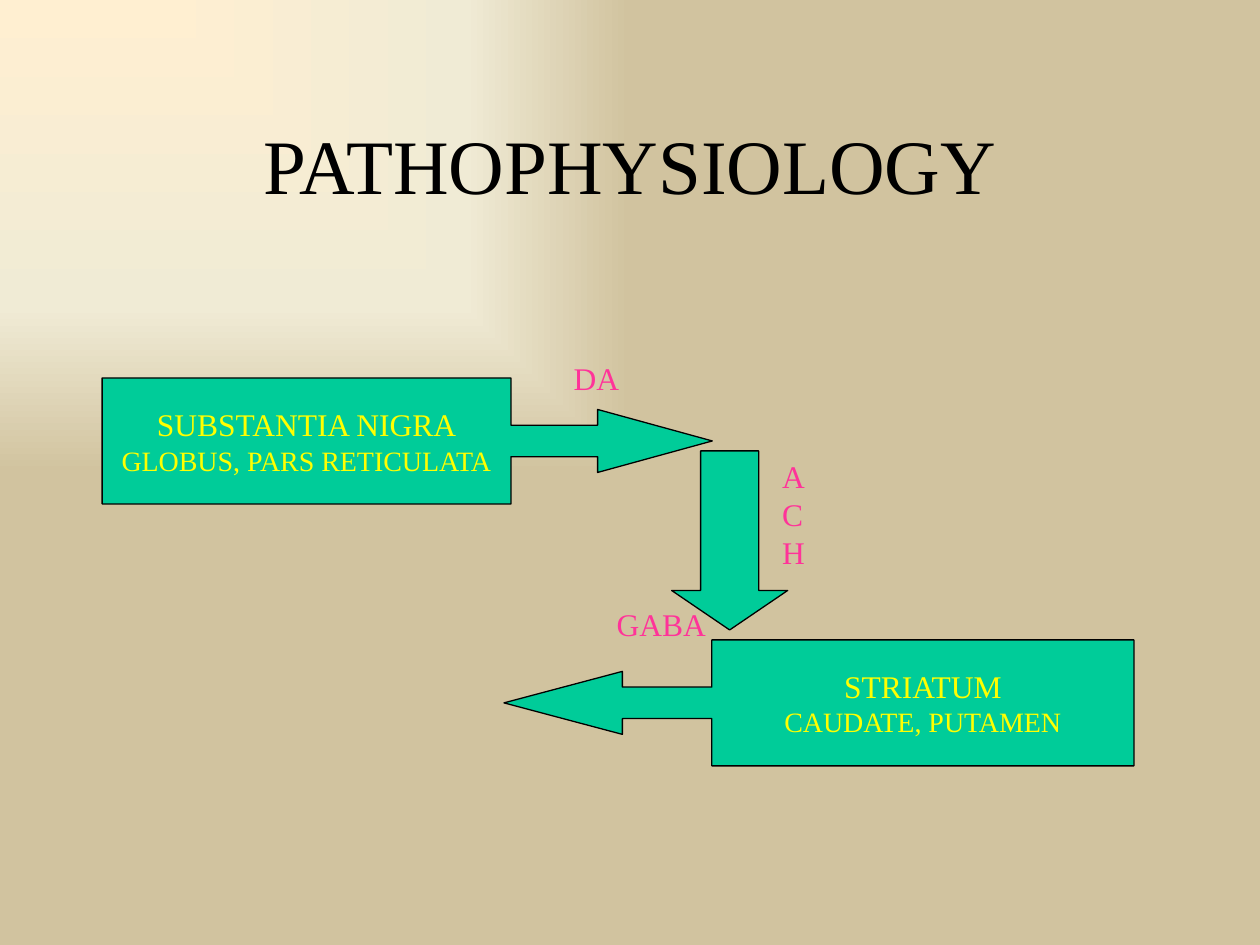
import pptx
import pptx.dml.color
import pptx.enum.shapes
import pptx.enum.text
import pptx.oxml
import pptx.oxml.ns
import pptx.util

Cm = pptx.util.Cm
Pt = pptx.util.Pt
RGBColor = pptx.dml.color.RGBColor
SHAPE = pptx.enum.shapes.MSO_SHAPE
ALIGN = pptx.enum.text.PP_ALIGN
ANCHOR = pptx.enum.text.MSO_ANCHOR
AUTO_SIZE = pptx.enum.text.MSO_AUTO_SIZE

FONT = "Times New Roman"
BLACK = RGBColor(0x00, 0x00, 0x00)
GREEN = RGBColor(0x00, 0xCC, 0x99)
YELLOW = RGBColor(0xFF, 0xFF, 0x00)
PINK = RGBColor(0xFF, 0x33, 0x99)
GLOW = (
    (0, RGBColor(0xFF, 0xEF, 0xD1)),
    (65, RGBColor(0xF0, 0xEB, 0xD5)),
    (100, RGBColor(0xD1, 0xC3, 0x9F)),
)


def paint_background(slide):
    """Spread the gradient from the top left corner in rectangles."""
    slide.background.fill.gradient()
    gradient = slide.element.find(".//" + pptx.oxml.ns.qn("a:gradFill"))
    stops = "".join(
        f'<a:gs pos="{percent * 1000}"><a:srgbClr val="{color}"/></a:gs>'
        for percent, color in GLOW
    )
    corner_gradient = pptx.oxml.parse_xml(
        f'<a:gradFill {pptx.oxml.ns.nsdecls("a")} rotWithShape="0">'
        f"<a:gsLst>{stops}</a:gsLst>"
        '<a:path path="rect"><a:fillToRect r="100000" b="100000"/></a:path>'
        "</a:gradFill>"
    )
    gradient.getparent().replace(gradient, corner_gradient)


def write_lines(frame, lines, color, align):
    """Write one paragraph for each (text, size) pair."""
    for index, (text, size) in enumerate(lines):
        paragraph = frame.add_paragraph() if index else frame.paragraphs[0]
        paragraph.alignment = align
        run = paragraph.add_run()
        run.text = text
        run.font.name = FONT
        run.font.size = Pt(size)
        run.font.color.rgb = color


def add_title(slide, left, top, width, height):
    title = slide.shapes.title
    title.left, title.top = Cm(left), Cm(top)
    title.width, title.height = Cm(width), Cm(height)
    title.text_frame.vertical_anchor = ANCHOR.MIDDLE
    write_lines(title.text_frame, [("PATHOPHYSIOLOGY", 44)], BLACK, ALIGN.CENTER)


def add_green_shape(slide, kind, box, adjustments, lines=()):
    shape = slide.shapes.add_shape(kind, *map(Cm, box))
    for index, value in enumerate(adjustments):
        shape.adjustments[index] = value
    shape.shadow.inherit = False
    shape.fill.solid()
    shape.fill.fore_color.rgb = GREEN
    shape.line.color.rgb = BLACK
    shape.line.width = Pt(0.75)
    shape.text_frame.word_wrap = False
    shape.text_frame.vertical_anchor = ANCHOR.MIDDLE
    write_lines(shape.text_frame, lines, YELLOW, ALIGN.CENTER)


def add_transmitter(slide, text, box, wrap):
    label = slide.shapes.add_textbox(*map(Cm, box))
    label.text_frame.word_wrap = wrap
    label.text_frame.auto_size = AUTO_SIZE.SHAPE_TO_FIT_TEXT
    write_lines(label.text_frame, [(text, 18)], PINK, ALIGN.RIGHT)


def add_pathway(slide, left, top):
    """Draw the loop between substantia nigra and striatum."""

    def place(x, y, width, height):
        return left + x, top + y, width, height

    add_green_shape(
        slide, SHAPE.LEFT_ARROW_CALLOUT, place(8.1, 5.79, 12.7, 2.54),
        (0.25, 0.25, 0.94, 0.67),
        [("STRIATUM", 18), ("CAUDATE, PUTAMEN", 16)],
    )
    add_green_shape(
        slide, SHAPE.RIGHT_ARROW_CALLOUT, place(0, 0.51, 12.3, 2.54),
        (0.25, 0.25, 0.91, 0.67),
        [("SUBSTANTIA NIGRA", 18), ("GLOBUS, PARS RETICULATA", 16)],
    )
    add_transmitter(slide, "GABA", place(9.04, 4.96, 3.38, 1.02), True)
    add_transmitter(slide, "DA", place(9.22, 0, 1.45, 1.02), False)
    add_green_shape(
        slide, SHAPE.DOWN_ARROW, place(11.48, 1.98, 2.34, 3.61), (0.5, 0.34)
    )
    # The narrow box wraps this label to one letter a line.
    add_transmitter(slide, "ACH", place(13.46, 1.98, 0.51, 2.57), True)


def main():
    presentation = pptx.Presentation()
    presentation.slide_width = Cm(25.4)
    presentation.slide_height = Cm(19.05)
    slide = presentation.slides.add_slide(presentation.slide_layouts[5])
    paint_background(slide)
    add_title(slide, 1.91, 1.7, 21.59, 3.18)
    add_pathway(slide, 2.06, 7.11)
    presentation.save("out.pptx")


if __name__ == "__main__":
    main()
